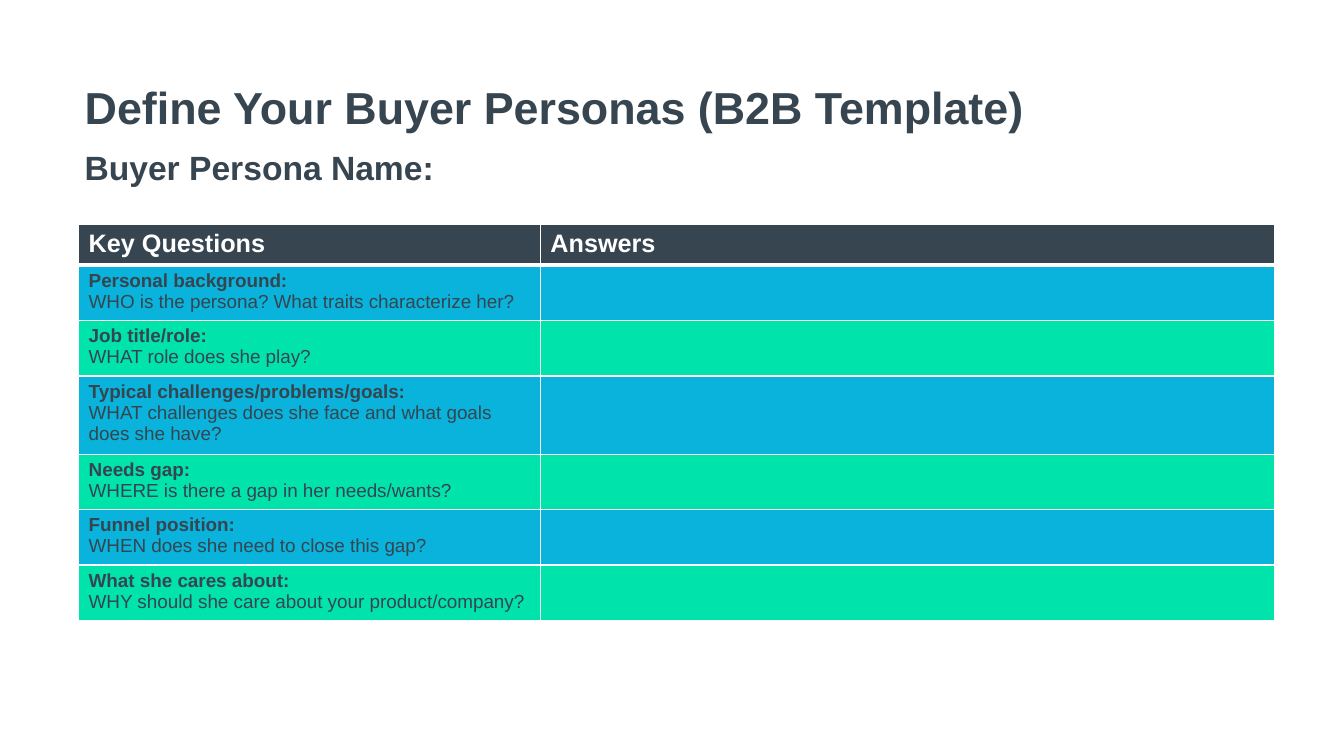
from dataclasses import dataclass

from lxml.etree import SubElement
from pptx import Presentation
from pptx.dml.color import RGBColor
from pptx.enum.text import MSO_ANCHOR, PP_ALIGN
from pptx.oxml.ns import qn
from pptx.util import Inches, Pt

TITLE = "Define Your Buyer Personas (B2B Template)"
PERSONA_LABEL = "Buyer Persona Name:"
HEADINGS = ["Key Questions", "Answers"]
QUESTIONS = [
    ("Personal background:", "WHO is the persona? What traits characterize her?"),
    ("Job title/role:", "WHAT role does she play?"),
    ("Typical challenges/problems/goals:",
     "WHAT challenges does she face and what goals does she have?"),
    ("Needs gap:", "WHERE is there a gap in her needs/wants?"),
    ("Funnel position:", "WHEN does she need to close this gap?"),
    ("What she cares about:", "WHY should she care about your product/company?"),
]
COLUMN_WIDTHS = [4.58, 7.28]
ROW_HEIGHTS = [0.37, 0.52, 0.52, 0.72, 0.52, 0.52, 0.52]


@dataclass(frozen=True)
class Theme:
    font: str = "Arial"
    dark: str = "364550"
    white: str = "FFFFFF"
    bands: tuple = ("09B3DB", "00E4AB")
    title_size: float = 32
    label_size: float = 24
    heading_size: float = 18
    question_size: float = 13.5


THEME = Theme()


def add_run(paragraph, text, size, color, bold=True):
    run = paragraph.add_run()
    run.text = text
    run.font.name = THEME.font
    run.font.size = Pt(size)
    run.font.bold = bold
    run.font.color.rgb = RGBColor.from_string(color)


def fill_cell(cell, color, bottom_width):
    properties = cell._tc.get_or_add_tcPr()
    for side, width in (("L", 1), ("R", 1), ("T", 1), ("B", bottom_width)):
        border = SubElement(properties, qn(f"a:ln{side}"), w=str(Pt(width)))
        border_fill = SubElement(border, qn("a:solidFill"))
        SubElement(border_fill, qn("a:srgbClr"), val=THEME.white)
    cell.fill.solid()
    cell.fill.fore_color.rgb = RGBColor.from_string(color)


def add_heading(frame, text, size):
    frame.word_wrap = True
    paragraph = frame.paragraphs[0]
    paragraph.alignment = PP_ALIGN.LEFT
    paragraph.line_spacing = 0.9
    add_run(paragraph, text, size, THEME.dark)


def add_question_table(slide):
    table = slide.shapes.add_table(
        len(ROW_HEIGHTS), len(COLUMN_WIDTHS), Inches(0.78), Inches(2.23),
        Inches(sum(COLUMN_WIDTHS)), Inches(sum(ROW_HEIGHTS))).table
    for column, width in zip(table.columns, COLUMN_WIDTHS):
        column.width = Inches(width)
    for row, height in zip(table.rows, ROW_HEIGHTS):
        row.height = Inches(height)

    for cell, heading in zip(table.rows[0].cells, HEADINGS):
        fill_cell(cell, THEME.dark, 3)
        add_run(cell.text_frame.paragraphs[0], heading, THEME.heading_size, THEME.white)

    for index, (topic, question) in enumerate(QUESTIONS):
        cells = table.rows[index + 1].cells
        for cell in cells:
            fill_cell(cell, THEME.bands[index % len(THEME.bands)], 1)
        frame = table.cell(index + 1, 0).text_frame
        add_run(frame.paragraphs[0], topic, THEME.question_size, THEME.dark)
        add_run(frame.add_paragraph(), question, THEME.question_size, THEME.dark, False)


def main():
    presentation = Presentation()
    presentation.slide_width = Inches(13.33)
    presentation.slide_height = Inches(7.5)
    slide = presentation.slides.add_slide(presentation.slide_layouts[5])

    title = slide.shapes.title
    title.left, title.top = Inches(0.74), Inches(0.32)
    title.width, title.height = Inches(11.5), Inches(1.55)
    title.text_frame.vertical_anchor = MSO_ANCHOR.MIDDLE
    add_heading(title.text_frame, TITLE, THEME.title_size)

    label = slide.shapes.add_textbox(Inches(0.74), Inches(1.45), Inches(11.92), Inches(0.5))
    add_heading(label.text_frame, PERSONA_LABEL, THEME.label_size)

    add_question_table(slide)
    presentation.save("out.pptx")


if __name__ == "__main__":
    main()
